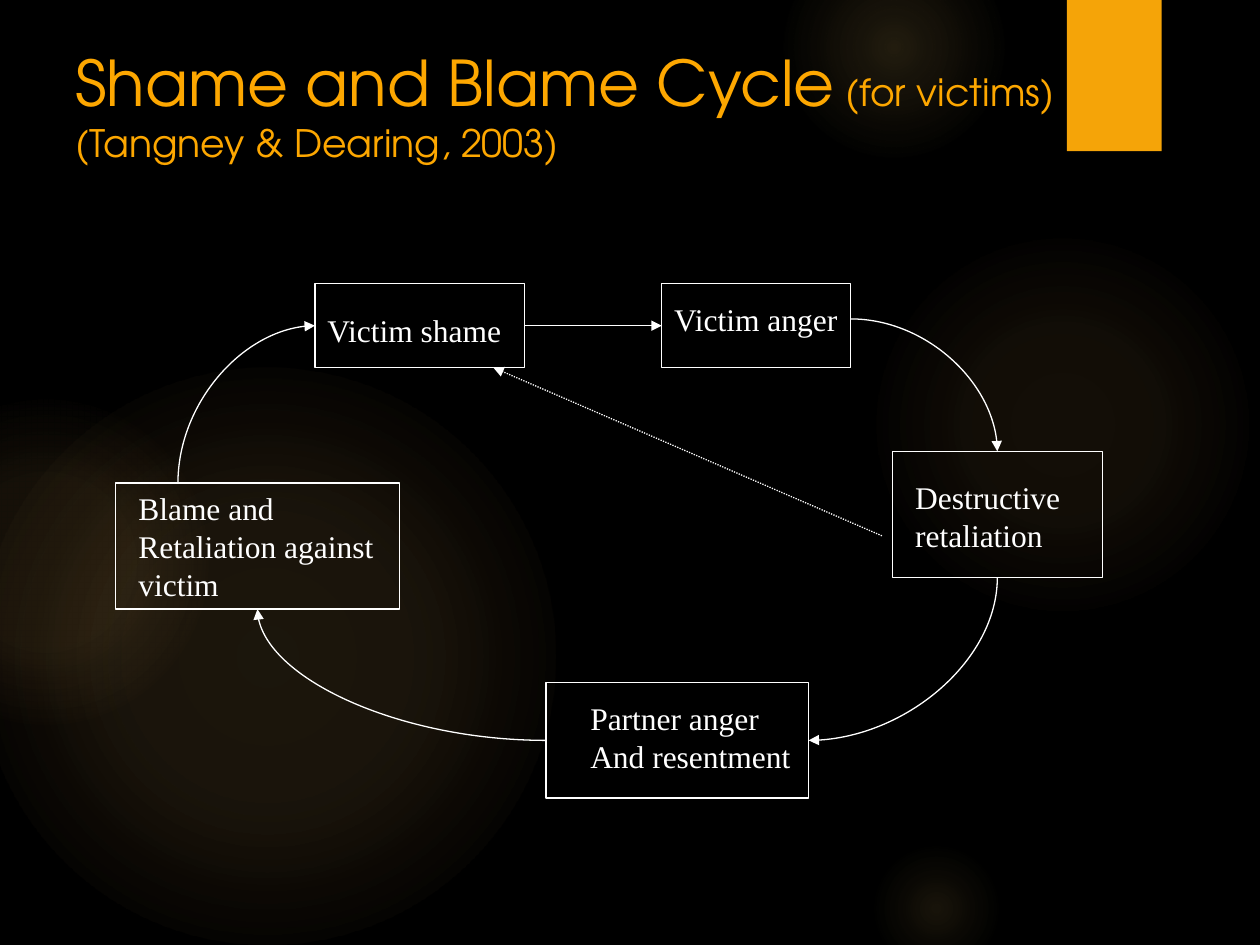
from dataclasses import dataclass

from lxml.etree import SubElement
from pptx import Presentation
from pptx.dml.color import RGBColor
from pptx.enum.dml import MSO_LINE
from pptx.enum.shapes import MSO_CONNECTOR, MSO_SHAPE
from pptx.enum.text import MSO_ANCHOR
from pptx.oxml.ns import qn
from pptx.util import Cm, Pt

STRAIGHT, CURVE = MSO_CONNECTOR.STRAIGHT, MSO_CONNECTOR.CURVE
RECTANGLE, ELLIPSE = MSO_SHAPE.RECTANGLE, MSO_SHAPE.OVAL
DOTTED = MSO_LINE.ROUND_DOT
TOP = MSO_ANCHOR.TOP
LEFT_SIDE, RIGHT_SIDE = 1, 3


@dataclass(frozen=True)
class Theme:
    """Colours, fonts and type sizes of the slide."""
    background: str = "000000"
    glow: str = "FAC96A"
    bookmark: str = "F5A408"
    title: str = "FDA700"
    ink: str = "FFFFFF"
    title_font: str = "TeX Gyre Adventor"
    body_font: str = "Times New Roman"
    title_size: float = 36
    subtitle_size: float = 21.6
    body_size: float = 18
    body_leading: float = 21.6
    line_width: float = 0.75


THEME = Theme()


@dataclass(frozen=True)
class Box:
    """A rectangle in centimetres."""
    left: float
    top: float
    width: float
    height: float

    def inside(self, left, top, width, height):
        """Return a box given relative to this one."""
        return Box(self.left + left, self.top + top, width, height)

    def point(self, across, down):
        """Return the point at the given fractions of the sides."""
        return self.left + across * self.width, self.top + down * self.height

    def emu(self):
        """Return the four lengths for a shape call."""
        return Cm(self.left), Cm(self.top), Cm(self.width), Cm(self.height)


def colour(value):
    """Turn a hex value into a colour."""
    return RGBColor.from_string(value)


def add_text(slide, box, lines, *, font, color, leading=None, wrap=False, breaks=False):
    """Write lines of (text, size) runs, as paragraphs or with line breaks."""
    frame = slide.shapes.add_textbox(*box.emu()).text_frame
    frame.word_wrap = wrap
    frame.vertical_anchor = TOP
    paragraph = frame.paragraphs[0]
    for number, runs in enumerate(lines):
        if number and breaks:
            paragraph.add_line_break()
        elif number:
            paragraph = frame.add_paragraph()
        if leading:
            paragraph.line_spacing = Pt(leading)
        for text, size in runs:
            run = paragraph.add_run()
            run.text = text
            run.font.name = font
            run.font.size = Pt(size)
            run.font.color.rgb = colour(color)


def add_plain_shape(slide, kind, box):
    """Add a shape with no shadow, fill or line."""
    shape = slide.shapes.add_shape(kind, *box.emu())
    shape.shadow.inherit = False
    shape.fill.background()
    shape.line.fill.background()
    return shape


def add_glow(slide, box, stops):
    """Add a circle that fades out through (position, opacity) stops."""
    properties = add_plain_shape(slide, ELLIPSE, box)._element.spPr
    gradient = properties.makeelement(qn("a:gradFill"), {"rotWithShape": "1"})
    properties.replace(properties.find(qn("a:noFill")), gradient)
    stop_list = SubElement(gradient, qn("a:gsLst"))
    for position, opacity in stops:
        stop = SubElement(stop_list, qn("a:gs"), pos=str(position * 1000))
        color = SubElement(stop, qn("a:srgbClr"), val=THEME.glow)
        SubElement(color, qn("a:alpha"), val=str(opacity * 1000))
    shade = SubElement(gradient, qn("a:path"), {"path": "circle"})
    SubElement(shade, qn("a:fillToRect"), dict.fromkeys("ltrb", "50000"))


def style_arrow(connector, dash=None):
    """Give a connector its line and arrowhead."""
    line = connector.line
    line.color.rgb = colour(THEME.ink)
    line.width = Pt(THEME.line_width)
    if dash:
        line.dash_style = dash
    SubElement(line._get_or_add_ln(), qn("a:tailEnd"), type="triangle")
    SubElement(connector._element.spPr, qn("a:effectLst"))


def add_straight_arrow(slide, start, end, dash=None):
    """Draw a straight arrow between two points."""
    connector = slide.shapes.add_connector(STRAIGHT, *map(Cm, start + end))
    style_arrow(connector, dash)
    return connector


def add_curved_arrow(slide, start, end, rotation):
    """Draw a quarter-turn arrow whose first direction is set by the rotation."""
    width, height = abs(end[0] - start[0]), abs(end[1] - start[1])
    if rotation % 180:
        width, height = height, width
    left = (start[0] + end[0] - width) / 2
    top = (start[1] + end[1] - height) / 2
    connector = slide.shapes.add_connector(
        CURVE, Cm(left), Cm(top), Cm(left + width), Cm(top + height))
    properties = connector._element.spPr
    properties.find(qn("a:prstGeom")).set("prst", "curvedConnector2")
    properties.find(qn("a:xfrm")).set("rot", str(rotation * 60000))
    style_arrow(connector)


def build_backdrop(slide, box):
    """Place the glows and the bookmark on the dark background."""
    fill = slide.background.fill
    fill.solid()
    fill.fore_color.rgb = colour(THEME.background)
    glows = [
        (17.5, 4.65, 7.82, [(0, 7), (36, 6), (69, 0)]),
        (15.8, -1.27, 4.45, [(0, 14), (36, 7), (73, 0)]),
        (17.5, 16.94, 2.74, [(0, 10), (31, 5), (66, 0)]),
        (-0.43, 7.42, 11.63, [(0, 11), (36, 10), (75, 0)]),
        (-2.34, 8.05, 6.55, [(0, 8), (36, 8), (72, 0)]),
    ]
    for left, top, size, stops in glows:
        add_glow(slide, box.inside(left, top, size, size), stops)
    bookmark = add_plain_shape(slide, RECTANGLE, box.inside(21.51, 0, 1.91, 3.05))
    bookmark.fill.solid()
    bookmark.fill.fore_color.rgb = colour(THEME.bookmark)


def build_title(slide, box):
    """Write the title and its source."""
    lines = [
        [("Shame and Blame Cycle", THEME.title_size), (" (for victims)", THEME.subtitle_size)],
        [("(Tangney & Dearing, 2003)", THEME.subtitle_size)],
    ]
    add_text(slide, box, lines, font=THEME.title_font, color=THEME.title, wrap=True, breaks=True)


def build_stage(slide, box, label, lines):
    """Draw one outlined stage with its label and return the outline."""
    outline = add_plain_shape(slide, RECTANGLE, box)
    outline.line.color.rgb = colour(THEME.ink)
    outline.line.width = Pt(THEME.line_width)
    add_text(slide, box.inside(*label), [[(line, THEME.body_size)] for line in lines],
             font=THEME.body_font, color=THEME.ink, leading=THEME.body_leading)
    return outline


def build_cycle(slide, box):
    """Draw the five stages and the arrows between them."""
    shame = box.inside(4.02, 0, 4.23, 1.69)
    anger = box.inside(11.01, 0, 3.81, 1.69)
    retaliation = box.inside(15.66, 3.38, 4.23, 2.54)
    resentment = box.inside(8.68, 8.04, 5.29, 2.33)
    blame = box.inside(0, 4.02, 5.72, 2.54)

    shame_shape = build_stage(slide, shame, (0, 0.42, 4.06, 1.02), ["Victim shame"])
    anger_shape = build_stage(slide, anger, (0, 0.21, 3.83, 1.02), ["Victim anger"])
    build_stage(slide, retaliation, (0.21, 0.42, 3.43, 1.78), ["Destructive", "retaliation"])
    build_stage(slide, resentment, (0.64, 0.21, 4.55, 1.78), ["Partner anger", "And resentment"])
    build_stage(slide, blame, (0.21, 0, 5.26, 2.54),
                ["Blame and", "Retaliation against", "victim"])

    add_curved_arrow(slide, blame.point(0.22, 0), shame.point(0, 0.5), 270)
    link = add_straight_arrow(slide, shame.point(1, 0.5), anger.point(0, 0.5))
    link.begin_connect(shame_shape, RIGHT_SIDE)
    link.end_connect(anger_shape, LEFT_SIDE)
    add_curved_arrow(slide, anger.point(1, 0.42), retaliation.point(0.5, 0), 0)
    add_curved_arrow(slide, retaliation.point(0.5, 1), resentment.point(1, 0.5), 90)
    add_curved_arrow(slide, resentment.point(0, 0.5), blame.point(0.5, 1), 180)
    add_straight_arrow(slide, retaliation.point(-0.05, 0.67), shame.point(0.85, 1), DOTTED)


def main():
    """Build the slide and save it."""
    presentation = Presentation()
    page = Box(0, 0, 25.4, 19.05)
    presentation.slide_width, presentation.slide_height = Cm(page.width), Cm(page.height)
    slide = presentation.slides.add_slide(presentation.slide_layouts[6])
    build_backdrop(slide, page)
    build_title(slide, page.inside(1.27, 0.76, 22.86, 2.18))
    build_cycle(slide, page.inside(2.33, 5.72, 19.89, 10.37))
    presentation.save("out.pptx")


if __name__ == "__main__":
    main()
